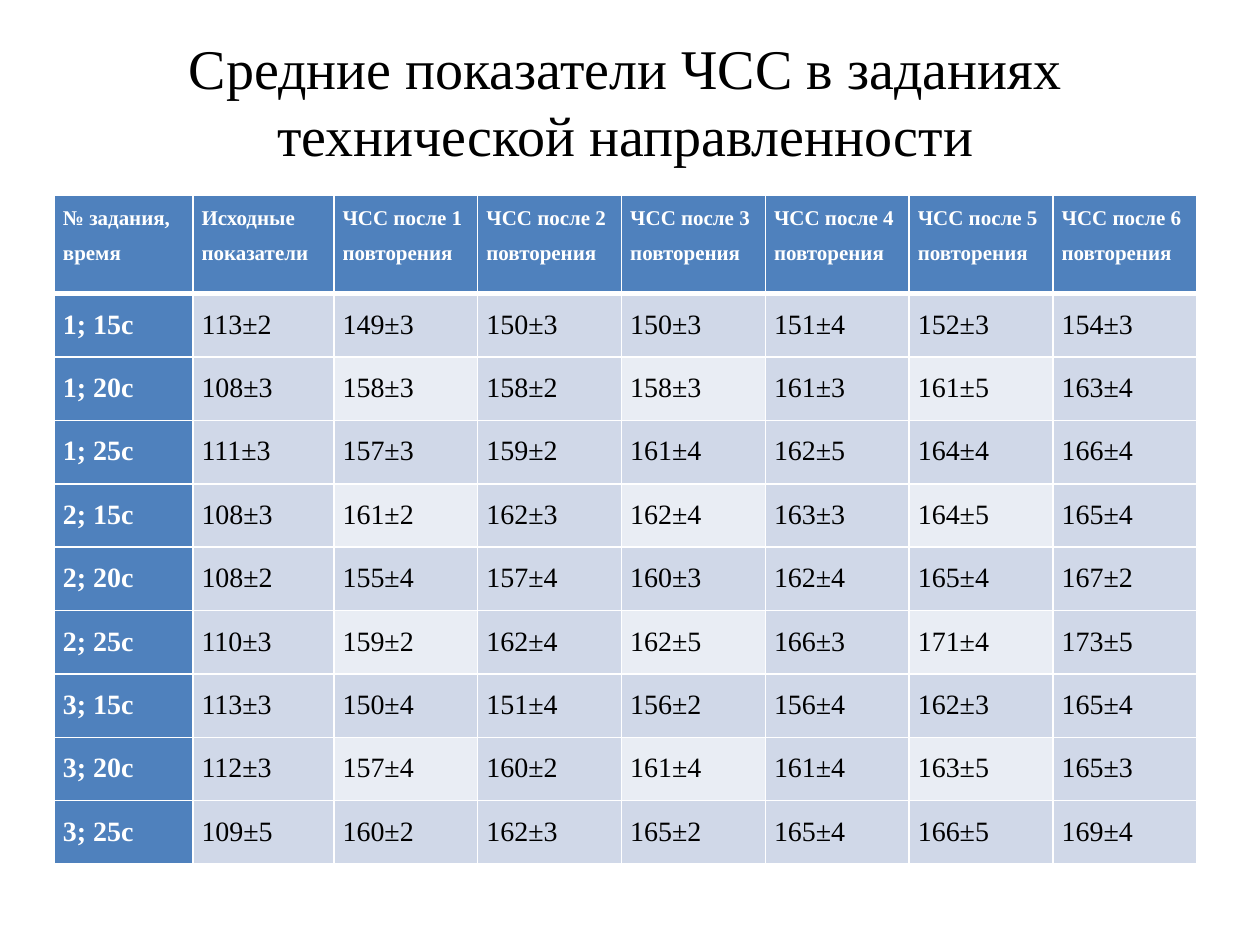
from lxml import etree
from pptx import Presentation
from pptx.dml.color import RGBColor
from pptx.enum.text import MSO_ANCHOR, PP_ALIGN
from pptx.oxml.ns import qn
from pptx.util import Inches, Pt

FONT = "Times New Roman"
WHITE, BLACK = "FFFFFF", "000000"
BLUE, BAND, PALE = "4F81BD", "D0D8E8", "E9EDF4"

TITLE = "Средние показатели ЧСС в заданиях технической направленности"
HEADINGS = ["№ задания, время", "Исходные показатели"] + [
    f"ЧСС после {number} повторения" for number in range(1, 7)
]
READINGS = {
    "1; 15с": "113±2 149±3 150±3 150±3 151±4 152±3 154±3",
    "1; 20с": "108±3 158±3 158±2 158±3 161±3 161±5 163±4",
    "1; 25с": "111±3 157±3 159±2 161±4 162±5 164±4 166±4",
    "2; 15с": "108±3 161±2 162±3 162±4 163±3 164±5 165±4",
    "2; 20с": "108±2 155±4 157±4 160±3 162±4 165±4 167±2",
    "2; 25с": "110±3 159±2 162±4 162±5 166±3 171±4 173±5",
    "3; 15с": "113±3 150±4 151±4 156±2 156±4 162±3 165±4",
    "3; 20с": "112±3 157±4 160±2 161±4 161±4 163±5 165±3",
    "3; 25с": "109±5 160±2 162±3 165±2 165±4 166±5 169±4",
}


def color(value):
    """Return the colour for a hex string."""
    return RGBColor.from_string(value)


def style_text(frame, size, ink, align, bold=False, spacing=None):
    """Format every paragraph and run of a text frame."""
    for paragraph in frame.paragraphs:
        paragraph.alignment = align
        paragraph.line_spacing = spacing
        for run in paragraph.runs:
            run.font.name = FONT
            run.font.size = Pt(size)
            run.font.bold = bold
            run.font.color.rgb = color(ink)


def add_borders(cell, widths):
    """Draw white borders with widths in points for left, right, top, bottom."""
    properties = cell._tc.get_or_add_tcPr()
    for index, (side, width) in enumerate(zip("LRTB", widths)):
        line = etree.Element(qn(f"a:ln{side}"), w=str(Pt(width)))
        fill = etree.SubElement(line, qn("a:solidFill"))
        etree.SubElement(fill, qn("a:srgbClr"), val=WHITE)
        properties.insert(index, line)


def add_title(slide, left, top, width, height):
    """Place the centred heading in its box."""
    frame = slide.shapes.add_textbox(left, top, width, height).text_frame
    frame.word_wrap = True
    frame.vertical_anchor = MSO_ANCHOR.MIDDLE
    frame.text = TITLE
    style_text(frame, 32, BLACK, PP_ALIGN.CENTER)


def fill_cell(cell, words, row, column):
    """Write one cell and style it by its place in the grid."""
    heading = row == 0
    label = heading or column == 0
    pale = row % 2 == 0 and column % 2 == 0
    cell.text = words
    cell.margin_left = cell.margin_right = Inches(0.07)
    cell.margin_top = cell.margin_bottom = 0
    cell.fill.solid()
    cell.fill.fore_color.rgb = color(BLUE if label else PALE if pale else BAND)
    style_text(
        cell.text_frame,
        12 if heading else 16,
        WHITE if label else BLACK,
        PP_ALIGN.LEFT if heading else PP_ALIGN.JUSTIFY,
        bold=label,
        spacing=1.5,
    )
    add_borders(cell, (1, 1, 3 if row == 1 else 1, 3 if heading else 1))


def add_readings(slide, left, top, width, height):
    """Place the heart-rate table in its box."""
    rows = [HEADINGS] + [[task, *rates.split()] for task, rates in READINGS.items()]
    table = slide.shapes.add_table(
        len(rows), len(HEADINGS), left, top, width, height
    ).table

    first_widths = [Inches(1.1), Inches(1.12)]
    repeats = len(HEADINGS) - len(first_widths)
    repeat_width = (width - sum(first_widths)) // repeats
    for column, size in zip(table.columns, first_widths + [repeat_width] * repeats):
        column.width = size

    heading_height = Inches(0.78)
    task_height = (height - heading_height) // len(READINGS)
    for row, size in zip(table.rows, [heading_height] + [task_height] * len(READINGS)):
        row.height = size

    for row, values in enumerate(rows):
        for column, words in enumerate(values):
            fill_cell(table.cell(row, column), words, row, column)


def main():
    """Build and save the slide."""
    deck = Presentation()
    deck.slide_width, deck.slide_height = Inches(10), Inches(7.5)
    slide = deck.slides.add_slide(deck.slide_layouts[6])
    left, width = Inches(0.43), Inches(9.07)
    add_title(slide, left, Inches(0.21), width, Inches(1.18))
    add_readings(slide, left, Inches(1.55), width, Inches(5.31))
    deck.save("out.pptx")


if __name__ == "__main__":
    main()
